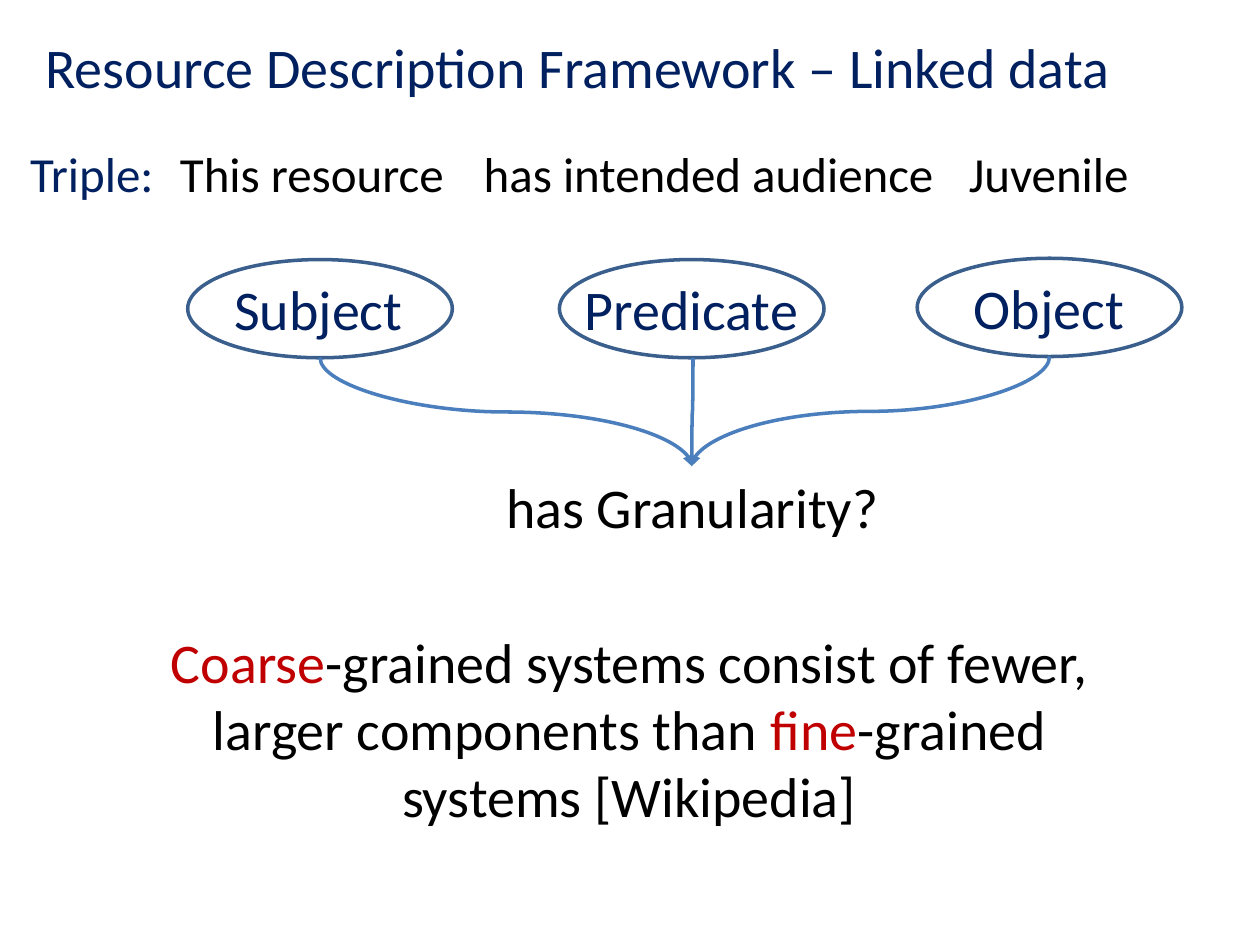
from lxml import etree
from pptx import Presentation
from pptx.dml.color import RGBColor
from pptx.enum.shapes import MSO_CONNECTOR, MSO_SHAPE
from pptx.enum.text import MSO_ANCHOR, MSO_AUTO_SIZE, PP_ALIGN
from pptx.oxml.ns import qn
from pptx.util import Inches, Pt

OVAL = MSO_SHAPE.OVAL
CURVE = MSO_CONNECTOR.CURVE
LEFT, CENTER = PP_ALIGN.LEFT, PP_ALIGN.CENTER
NAVY, BLACK, RED = "002060", "000000", "C00000"
OUTLINE, ARROW = "3A5F8C", "4B7EBC"
OVAL_WIDTH, OVAL_HEIGHT = 2.1, 0.78
TRIPLE_TOP, TRIPLE_HEIGHT = 1.09, 0.57
LINE_HEIGHT = 0.64
ARROW_TIP = (5.49, 3.7)


def color(hex_value):
    return RGBColor.from_string(hex_value)


def inches(*lengths):
    return [Inches(length) for length in lengths]


def write_text(shape, runs, size, alignment=LEFT, wrap=False):
    """Fill a shape with one paragraph of (text, colour) runs."""
    frame = shape.text_frame
    frame_format = {"word_wrap": wrap, "auto_size": MSO_AUTO_SIZE.SHAPE_TO_FIT_TEXT,
                    "vertical_anchor": MSO_ANCHOR.TOP}
    for name, value in frame_format.items():
        setattr(frame, name, value)
    paragraph = frame.paragraphs[0]
    paragraph.alignment = alignment
    for text, hex_value in runs:
        run = paragraph.add_run()
        run.text = text
        for name, value in {"name": "Calibri", "size": Pt(size)}.items():
            setattr(run.font, name, value)
        run.font.color.rgb = color(hex_value)


def add_text(shapes, box, runs, size=32, **options):
    write_text(shapes.add_textbox(*inches(*box)), runs, size, **options)


def add_title(slide, box, text):
    title = slide.shapes.title
    for name, value in zip(("left", "top", "width", "height"), inches(*box)):
        setattr(title, name, value)
    write_text(title, [(text, NAVY)], 32)


def add_term(slide, left, top, label, label_box):
    """Group a label with the ellipse around it."""
    group = slide.shapes.add_group_shape()
    add_text(group.shapes, label_box, [(label, NAVY)])
    oval = group.shapes.add_shape(OVAL, *inches(left, top, OVAL_WIDTH, OVAL_HEIGHT))
    oval.shadow.inherit = False
    oval.fill.background()
    oval.line.color.rgb = color(OUTLINE)
    oval.line.width = Pt(2)


def add_curved_arrow(slide, start, end):
    """Draw an S-curve that leaves and arrives vertically."""
    (start_x, start_y), (end_x, end_y) = start, end
    connector = slide.shapes.add_connector(CURVE, *inches(*start, *end))
    # The preset curve runs sideways, so turn its box about the midpoint
    width, height = end_y - start_y, abs(end_x - start_x)
    box = inches((start_x + end_x - width) / 2, (start_y + end_y - height) / 2,
                 width, height)
    for name, value in zip(("left", "top", "width", "height"), box):
        setattr(connector, name, value)
    properties = connector._element.spPr
    transform = properties.find(qn("a:xfrm"))
    rightward = end_x > start_x
    transform.set("rot", str((270 if rightward else 90) * 60000))
    transform.set("flipH", "1" if rightward else "0")
    transform.set("flipV", "0")
    connector.line.color.rgb = color(ARROW)
    connector.line.width = Pt(2)
    line = properties.find(qn("a:ln"))
    etree.SubElement(line, qn("a:tailEnd"), type="triangle")
    etree.SubElement(properties, qn("a:effectLst"))


def main():
    presentation = Presentation()
    presentation.slide_width, presentation.slide_height = inches(10, 7.5)
    slide = presentation.slides.add_slide(presentation.slide_layouts[5])
    add_title(slide, (0.26, 0.21, 8.74, LINE_HEIGHT),
              "Resource Description Framework – Linked data")

    # Example triple
    for left, width, text, hex_value in (
            (0.14, 1.19, "Triple:", NAVY),
            (1.33, 2.41, "This resource", BLACK),
            (3.74, 3.81, "has intended audience", BLACK),
            (7.59, 1.48, "Juvenile", BLACK)):
        add_text(slide.shapes, (left, TRIPLE_TOP, width, TRIPLE_HEIGHT),
                 [(text, hex_value)], size=28)

    # Parts of the triple, each pointing to the question
    for left, top, label, label_left, label_top, label_width in (
            (1.49, 2.06, "Subject", 1.76, 2.13, 1.55),
            (4.44, 2.06, "Predicate", 4.54, 2.13, 1.91),
            (7.28, 2.05, "Object", 7.63, 2.12, 1.41)):
        add_term(slide, left, top, label,
                 (label_left, label_top, label_width, LINE_HEIGHT))
        bottom = (left + OVAL_WIDTH / 2 + (0.01 if label == "Predicate" else 0),
                  top + OVAL_HEIGHT)
        add_curved_arrow(slide, bottom, ARROW_TIP)
    add_text(slide.shapes, (3.9, 3.7, 3.19, LINE_HEIGHT),
             [("has Granularity?", BLACK)], alignment=CENTER)

    # Definition
    add_text(slide.shapes, (1.14, 4.93, 7.71, 1.72),
             [("Coarse", RED),
              ("-grained systems consist of fewer, larger components than ", BLACK),
              ("fine", RED),
              ("-grained systems [Wikipedia]", BLACK)],
             alignment=CENTER, wrap=True)

    presentation.save("out.pptx")


if __name__ == "__main__":
    main()
